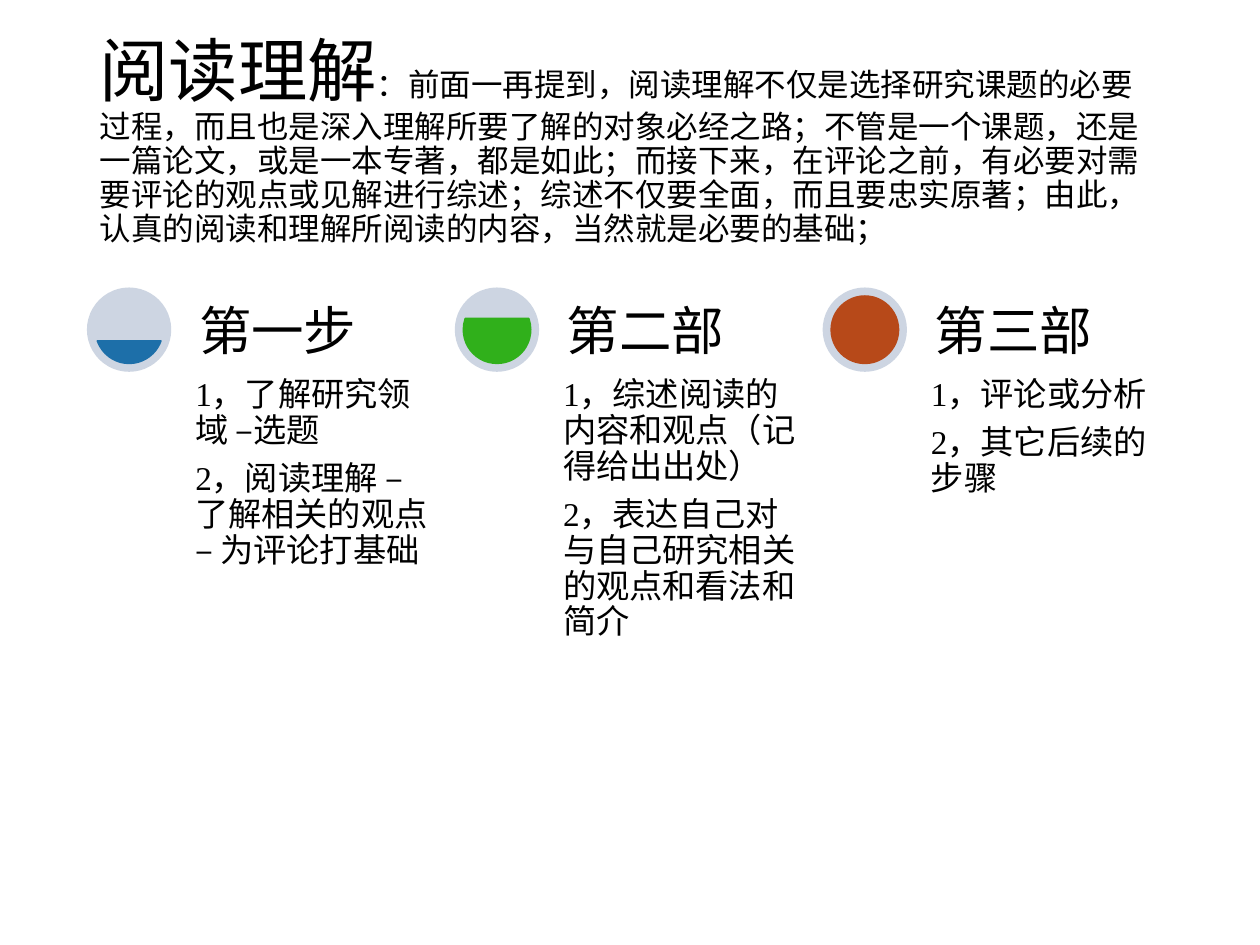
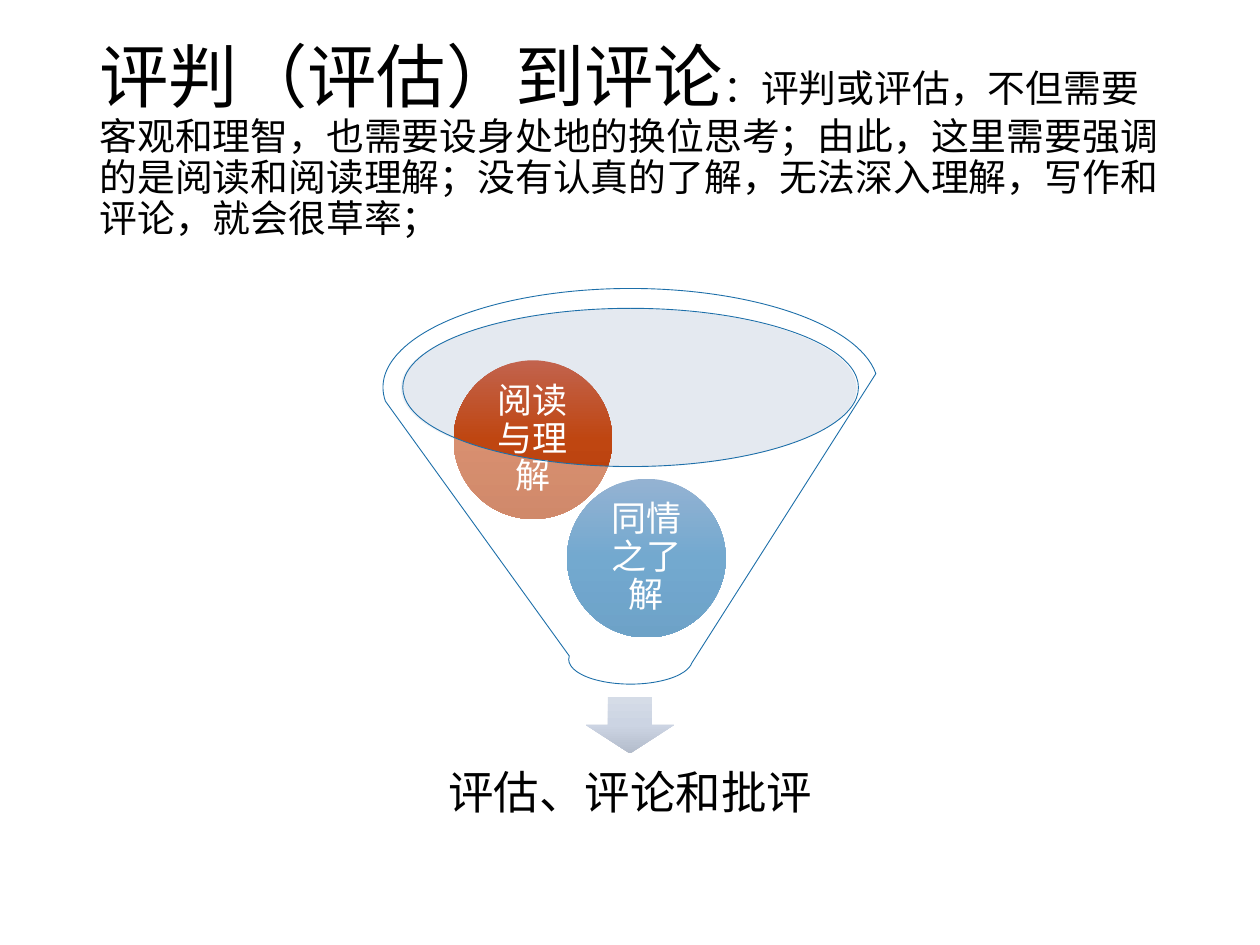
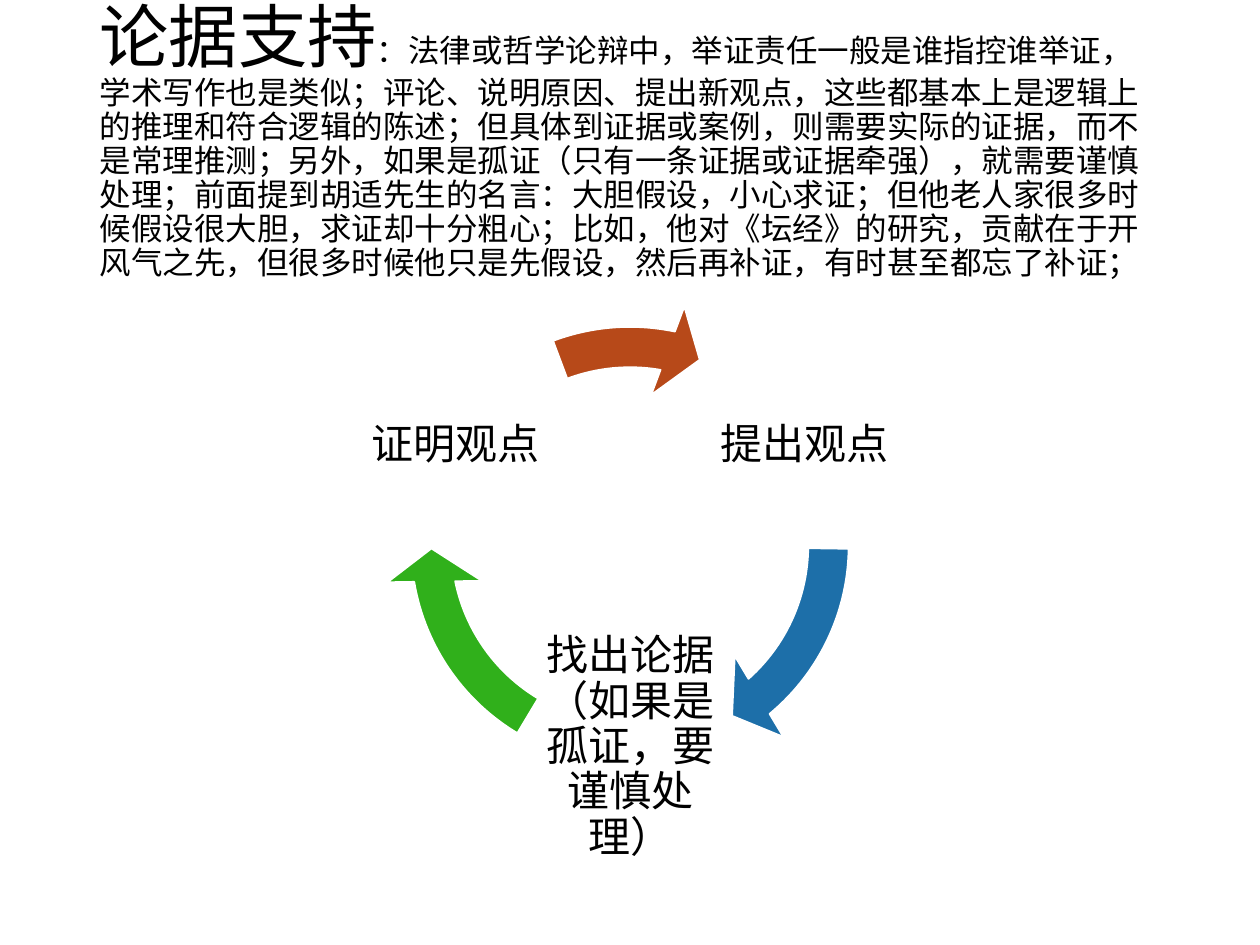
import math

import pptx
import pptx.dml.color
import pptx.enum.shapes
import pptx.enum.text
import pptx.oxml
import pptx.oxml.ns
import pptx.util

Pt = pptx.util.Pt
RGB = pptx.dml.color.RGBColor
SHAPE = pptx.enum.shapes.MSO_SHAPE
ALIGN = pptx.enum.text.PP_ALIGN
ANCHOR = pptx.enum.text.MSO_ANCHOR

# Shared style
FONT = "Times New Roman"
BLACK = RGB(0x00, 0x00, 0x00)
WHITE = RGB(0xFF, 0xFF, 0xFF)
BLUE = RGB(0x1D, 0x6F, 0xA9)
GREEN = RGB(0x30, 0xB0, 0x1B)
RUST = RGB(0xB7, 0x49, 0x19)
PALE = RGB(0xCD, 0xD5, 0xE2)
MOUTH = RGB(0xBD, 0xC8, 0xDA)
ARROW_SHADES = (RGB(0xD5, 0xDC, 0xE7), RGB(0xCC, 0xD4, 0xE3), RGB(0xB3, 0xBC, 0xCB))
BLUE_SHADES = (RGB(0x4E, 0x80, 0xB5), RGB(0x16, 0x70, 0xB0), RGB(0x0D, 0x65, 0xA3))
RUST_SHADES = (RGB(0xC2, 0x63, 0x4D), RGB(0xBF, 0x46, 0x11), RGB(0xB1, 0x3B, 0x08))
TITLE_BOX = (49.7, 28.8, 620.6, 104.4)
LEAD_SIZE = 39.6


def place(box):
    return [Pt(length) for length in box]


def add_titled_slide(deck, lead, explanation, size):
    """Title with a large lead followed by a smaller explanation."""
    slide = deck.slides.add_slide(deck.slide_layouts[5])
    title = slide.shapes.title
    title.left, title.top, title.width, title.height = place(TITLE_BOX)
    frame = title.text_frame
    frame.word_wrap = True
    frame.auto_size = pptx.enum.text.MSO_AUTO_SIZE.NONE
    frame.vertical_anchor = ANCHOR.MIDDLE
    paragraph = frame.paragraphs[0]
    paragraph.alignment = ALIGN.LEFT
    paragraph.line_spacing = 0.9
    for text, run_size in ((lead, LEAD_SIZE), (explanation, size)):
        run = paragraph.add_run()
        run.text = text
        run.font.name = FONT
        run.font.size = Pt(run_size)
        run.font.color.rgb = BLACK
    return slide


def write(frame, lines, size, inset, color=BLACK, align=ALIGN.CENTER, anchor=ANCHOR.MIDDLE):
    frame.word_wrap = True
    frame.vertical_anchor = anchor
    frame.margin_left = frame.margin_right = Pt(inset)
    frame.margin_top = frame.margin_bottom = Pt(inset)
    frame.text = "\n".join(lines)
    for paragraph in frame.paragraphs:
        paragraph.alignment = align
        paragraph.line_spacing = 0.9
        paragraph.space_after = Pt(round(size * 0.35, 2))
        paragraph.font.name = FONT
        paragraph.font.size = Pt(size)
        paragraph.font.color.rgb = color


def add_label(slide, box, lines, size, inset, **style):
    label = slide.shapes.add_textbox(*place(box))
    write(label.text_frame, lines, size, inset, **style)


def add_figure(slide, kind, box, fill=None, line=None, line_width=1, adjustments=()):
    figure = slide.shapes.add_shape(kind, *place(box))
    figure.shadow.inherit = False
    if fill is not None:
        figure.fill.solid()
        figure.fill.fore_color.rgb = fill
    if line is None:
        figure.line.fill.background()
    else:
        figure.line.color.rgb = line
        figure.line.width = Pt(line_width)
    for index, value in enumerate(adjustments):
        figure.adjustments[index] = value
    return figure


def set_opacity(figure, percent):
    color = figure.fill._xPr.find(".//" + pptx.oxml.ns.qn("a:srgbClr"))
    color.append(pptx.oxml.parse_xml(
        f'<a:alpha {pptx.oxml.ns.nsdecls("a")} val="{percent * 1000}"/>'))


def shade_down(figure, shades):
    """Vertical gradient with evenly spaced stops."""
    figure.fill.gradient()
    figure.fill.gradient_angle = 270
    stops = figure.fill._xPr.find(".//" + pptx.oxml.ns.qn("a:gsLst"))
    for stop in list(stops):
        stops.remove(stop)
    for index, shade in enumerate(shades):
        position = index * 100000 // (len(shades) - 1)
        stops.append(pptx.oxml.parse_xml(
            f'<a:gs {pptx.oxml.ns.nsdecls("a")} pos="{position}">'
            f'<a:srgbClr val="{shade}"/></a:gs>'))


def angle(degrees):
    """Angle in adjustment units (60000 per degree, scaled by 100000)."""
    return degrees % 360 * 0.6


# Steps with filling discs
def add_step(slide, left, top, share, color, heading, points):
    disc, rim, text_left, text_width = 48.2, 4.9, 58.3, 141.8
    add_figure(slide, SHAPE.OVAL, (left, top, disc, disc), PALE)
    level = math.degrees(math.asin(1 - 2 * share))
    add_figure(slide, SHAPE.CHORD,
               (left + rim, top + rim, disc - 2 * rim, disc - 2 * rim),
               color, color, adjustments=(angle(level), angle(180 - level)))
    add_label(slide, (left + text_left, top + disc, text_width, 202.3), points, 19, 3.6,
              align=ALIGN.LEFT, anchor=ANCHOR.TOP)
    add_label(slide, (left + text_left, top, text_width, disc), [heading], 30, 5.76,
              align=ALIGN.LEFT, anchor=ANCHOR.BOTTOM)


def build_reading(deck):
    slide = add_titled_slide(
        deck, "阅读理解",
        "：前面一再提到，阅读理解不仅是选择研究课题的必要过程，而且也是深入理解所要了解的对象必经之路；"
        "不管是一个课题，还是一篇论文，或是一本专著，都是如此；而接下来，在评论之前，"
        "有必要对需要评论的观点或见解进行综述；综述不仅要全面，而且要忠实原著；由此，"
        "认真的阅读和理解所阅读的内容，当然就是必要的基础；", 18)
    steps = (
        (BLUE, "第一步", ["1，了解研究领域 –选题", "2，阅读理解 – 了解相关的观点 – 为评论打基础"]),
        (GREEN, "第二部", ["1，综述阅读的内容和观点（记得给出出处）",
                        "2，表达自己对与自己研究相关的观点和看法和简介"]),
        (RUST, "第三部", ["1，评论或分析", "2，其它后续的步骤"]),
    )
    for index, (color, heading, points) in enumerate(steps):
        add_step(slide, 49.7 + index * 210.2, 164.3, (index + 1) / len(steps),
                 color, heading, points)


# Funnel with two balls and a result
def add_funnel(slide, left, top, balls, result):
    mouth = add_figure(slide, SHAPE.OVAL, (left + 10.1, top + 11.5, 260.6, 90.7), MOUTH)
    set_opacity(mouth, 40)
    arrow = add_figure(slide, SHAPE.DOWN_ARROW, (left + 115.9, top + 233.2, 50.4, 32.4))
    shade_down(arrow, ARROW_SHADES)
    add_label(slide, (left + 20.1, top + 259.2, 242.6, 60.5), [result], 26, 14.4)
    for text, shades, across, down in balls:
        ball = add_figure(slide, SHAPE.OVAL, (left + across, top + down, 90.7, 90.7))
        shade_down(ball, shades)
        write(ball.text_frame, [text], 20, 2.16, WHITE)
    cone = add_figure(slide, SHAPE.FUNNEL, (left, top, 283, 226.1), WHITE, BLUE, 0.5)
    set_opacity(cone, 40)


def build_judging(deck):
    slide = add_titled_slide(
        deck, "评判（评估）到评论",
        "：评判或评估，不但需要客观和理智，也需要设身处地的换位思考；由此，"
        "这里需要强调的是阅读和阅读理解；没有认真的了解，无法深入理解，写作和评论，就会很草率；", 21.6)
    balls = (("同情之了解", BLUE_SHADES, 105.1, 108.7),
             ("阅读与理解", RUST_SHADES, 40.3, 41))
    add_funnel(slide, 218.9, 164.9, balls, "评估、评论和批评")


# Cycle of three stages joined by curved arrows
def add_cycle(slide, left, top, stages):
    ring, label = 280.8, 118.8
    for text, across, down, color, head, tail in stages:
        add_label(slide, (left + across, top + down, label, label), [text], 24, 2.16)
        add_figure(slide, SHAPE.CIRCULAR_ARROW, (left, top, ring, ring), color, WHITE,
                   adjustments=(0.082, 5.757, angle(head), angle(tail), 0.096))


def build_evidence(deck):
    slide = add_titled_slide(
        deck, "论据支持",
        "：法律或哲学论辩中，举证责任一般是谁指控谁举证，学术写作也是类似；评论、说明原因、提出新观点，"
        "这些都基本上是逻辑上的推理和符合逻辑的陈述；但具体到证据或案例，则需要实际的证据，"
        "而不是常理推测；另外，如果是孤证（只有一条证据或证据牵强），就需要谨慎处理；"
        "前面提到胡适先生的名言：大胆假设，小心求证；但他老人家很多时候假设很大胆，求证却十分粗心；"
        "比如，他对《坛经》的研究，贡献在于开风气之先，但很多时候他只是先假设，然后再补证，"
        "有时甚至都忘了补证；", 18)
    stages = (
        ("提出观点", 180.7, 23.8, BLUE, 49.43, 0.84),
        ("找出论据（如果是孤证，要谨慎处理）", 81.4, 196.6, GREEN, 169.57, 120.98),
        ("证明观点", -18.7, 23.8, RUST, 280.98, 249.43),
    )
    add_cycle(slide, 219.6, 171.4, stages)


def main():
    deck = pptx.Presentation()
    deck.slide_width, deck.slide_height = Pt(720), Pt(540)
    build_reading(deck)
    build_judging(deck)
    build_evidence(deck)
    deck.save("out.pptx")


if __name__ == "__main__":
    main()
